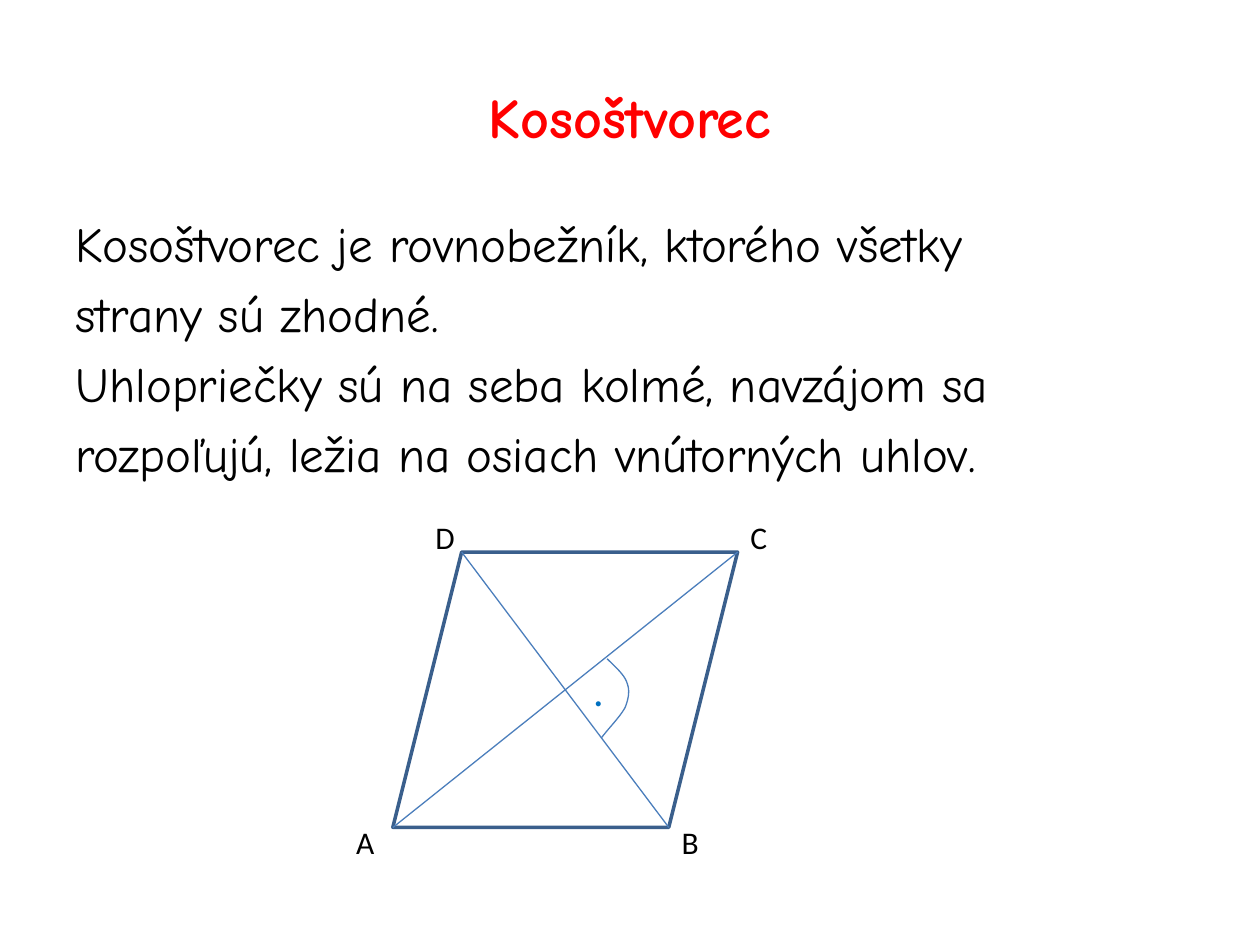
"""Build a slide that defines the rhombus and shows its diagonals."""
from lxml import etree
from pptx import Presentation
from pptx.dml.color import RGBColor
from pptx.enum.shapes import MSO_CONNECTOR, MSO_SHAPE
from pptx.enum.text import MSO_ANCHOR, MSO_AUTO_SIZE, PP_ALIGN
from pptx.oxml.ns import qn
from pptx.util import Cm, Pt

STRAIGHT = MSO_CONNECTOR.STRAIGHT
PARALLELOGRAM = MSO_SHAPE.PARALLELOGRAM
MIDDLE = MSO_ANCHOR.MIDDLE
GROW = MSO_AUTO_SIZE.SHAPE_TO_FIT_TEXT
CENTER = PP_ALIGN.CENTER

RED = RGBColor(0xFF, 0x00, 0x00)
BLACK = RGBColor(0x00, 0x00, 0x00)
DOT_BLUE = RGBColor(0x00, 0x70, 0xC0)
SIDE_BLUE = RGBColor(0x3A, 0x5F, 0x8C)
THIN_BLUE = RGBColor(0x4B, 0x7E, 0xBC)


def set_font(para, name, size, color):
    para.font.name = name
    para.font.size = Pt(size)
    para.font.color.rgb = color


def set_line(shape, color, width):
    shape.line.color.rgb = color
    shape.line.width = Pt(width)


deck = Presentation()
deck.slide_width, deck.slide_height = Cm(25.4), Cm(19.05)
page = deck.slides.add_slide(deck.slide_layouts[5])

title = page.shapes.title
title.left, title.top, title.width, title.height = Cm(1.27), Cm(0.76), Cm(22.86), Cm(3.18)
title.text_frame.text = "Kosoštvorec"
title.text_frame.vertical_anchor = MIDDLE
para = title.text_frame.paragraphs[0]
para.alignment = CENTER
para.font.bold = True
set_font(para, "Comic Neue", 32, RED)

body = page.shapes.add_textbox(Cm(1.27), Cm(4.17), Cm(22.86), Cm(13.11)).text_frame
body.word_wrap = True
body.text = "\n".join([
    "Kosoštvorec je rovnobežník, ktorého všetky",
    "strany sú zhodné.",
    "Uhlopriečky sú na seba kolmé, navzájom sa",
    "rozpoľujú, ležia na osiach vnútorných uhlov.",
])
for para in body.paragraphs:
    para.space_before = Pt(6.5)
    set_font(para, "Comic Neue", 28, BLACK)

left, top, width, height = 7.92, 11.13, 6.95, 5.55
right, bottom, slant = left + width, top + height, height / 4
rhombus = page.shapes.add_shape(PARALLELOGRAM, Cm(left), Cm(top), Cm(width), Cm(height))
rhombus.shadow.inherit = False
rhombus.fill.background()
set_line(rhombus, SIDE_BLUE, 2)

diagonals = [(left, bottom, right, top), (left + slant, top, right - slant, bottom)]
for ends in diagonals:
    diagonal = page.shapes.add_connector(STRAIGHT, *[Cm(value) for value in ends])
    set_line(diagonal, THIN_BLUE, 0.75)
    etree.SubElement(diagonal._element.spPr, qn("a:effectLst"))

arc_start = (12.24, 13.28)
arc_curves = [
    [(12.42, 13.46), (12.6, 13.61), (12.65, 13.79)],
    [(12.7, 13.94), (12.67, 14.1), (12.6, 14.27)],
    [(12.5, 14.45), (12.29, 14.66), (12.12, 14.88)],
]
steps = 10
arc_points = [arc_start]
for curve in arc_curves:
    corners = [arc_points[-1], *curve]
    for step in range(1, steps + 1):
        t = step / steps
        weights = [(1 - t) ** 3, 3 * t * (1 - t) ** 2, 3 * t * t * (1 - t), t ** 3]
        arc_points.append(tuple(
            sum(weight * corner[axis] for weight, corner in zip(weights, corners))
            for axis in (0, 1)
        ))
builder = page.shapes.build_freeform(Cm(arc_start[0]), Cm(arc_start[1]))
builder.add_line_segments([(Cm(x), Cm(y)) for x, y in arc_points[1:]], close=False)
right_angle = builder.convert_to_shape()
right_angle.shadow.inherit = False
right_angle.fill.background()
set_line(right_angle, THIN_BLUE, 0.75)

labels = [
    ("A", 6.93, 16.46, 0.89, 1.02, 18, BLACK, False),
    ("B", 13.49, 16.46, 0.86, 1.02, 18, BLACK, False),
    ("C", 14.88, 10.31, 0.86, 1.02, 18, BLACK, False),
    ("D", 8.53, 10.31, 0.91, 1.02, 18, BLACK, True),
    (".", 11.71, 13.28, 0.74, 1.27, 24, DOT_BLUE, True),
]
for text, x, y, box_width, box_height, size, color, wrap in labels:
    box = page.shapes.add_textbox(Cm(x), Cm(y), Cm(box_width), Cm(box_height))
    frame = box.text_frame
    frame.word_wrap = wrap
    frame.auto_size = GROW
    frame.text = text
    set_font(frame.paragraphs[0], "Calibri", size, color)

deck.save("out.pptx")
